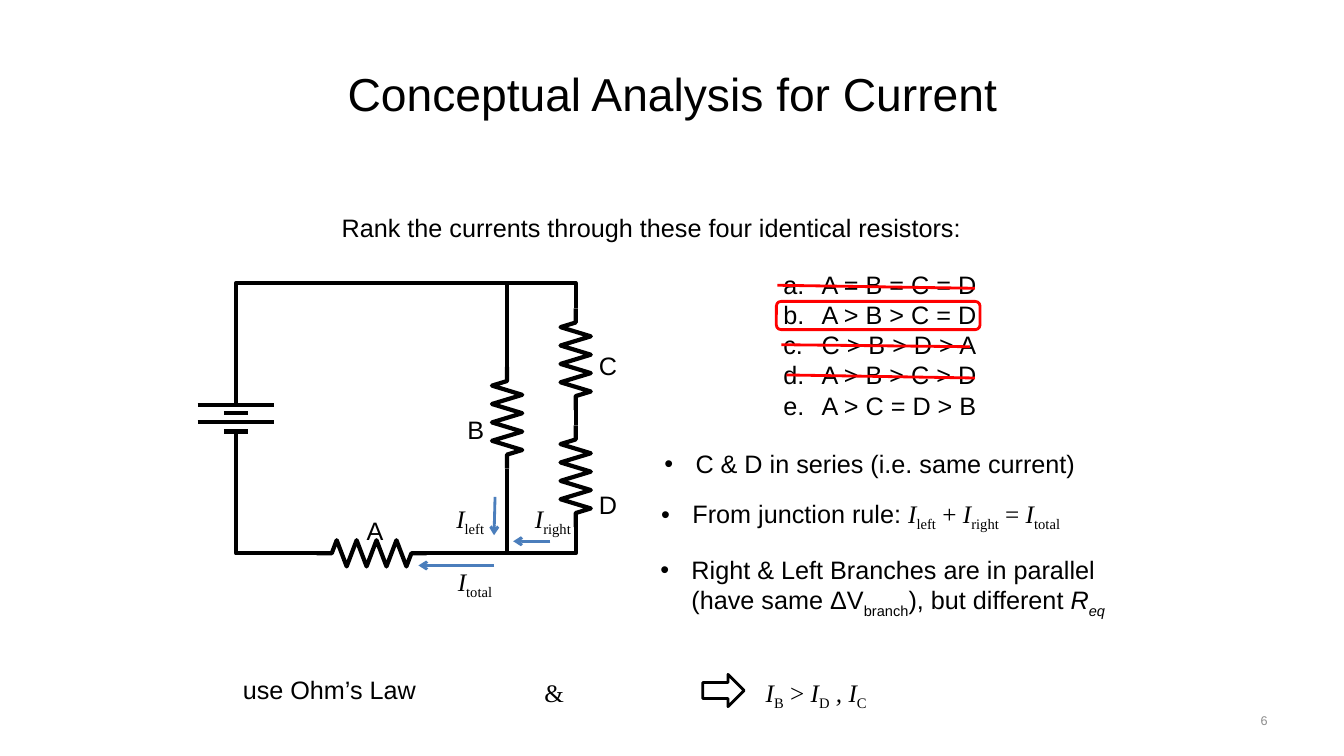
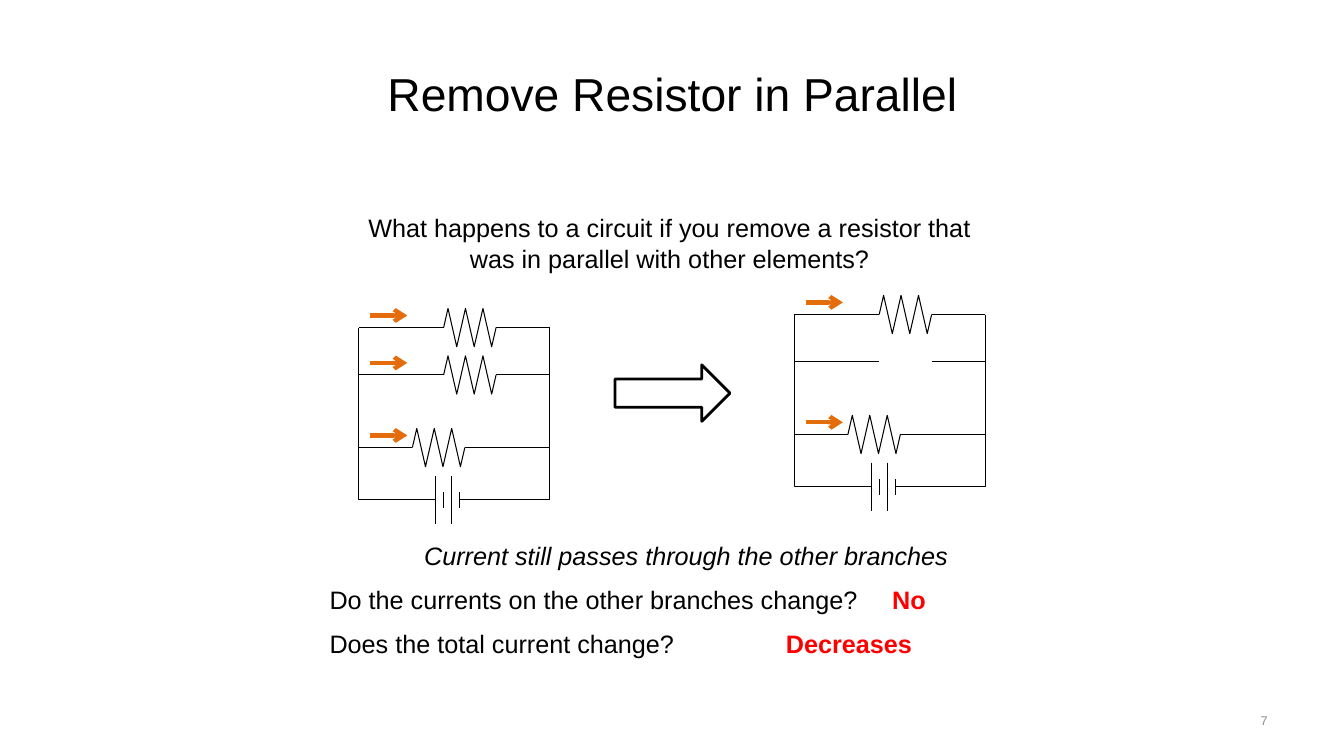
from lxml import etree
from pptx import Presentation
from pptx.dml.color import RGBColor
from pptx.enum.shapes import MSO_CONNECTOR, MSO_SHAPE
from pptx.enum.text import MSO_ANCHOR, PP_ALIGN
from pptx.oxml.ns import qn
from pptx.util import Inches, Pt

STRAIGHT = MSO_CONNECTOR.STRAIGHT
ROUNDED, RIGHT_ARROW = MSO_SHAPE.ROUNDED_RECTANGLE, MSO_SHAPE.RIGHT_ARROW
LEFT, CENTER, RIGHT = PP_ALIGN.LEFT, PP_ALIGN.CENTER, PP_ALIGN.RIGHT
MIDDLE = MSO_ANCHOR.MIDDLE

COLORS = {"ink": "000000", "answer": "FF0000", "current": "4B7EBC",
          "branch": "E46C0A", "page": "8C8C8C"}
SANS, SERIF = "Arial", "Times New Roman"
TITLE_SIZE, BODY_SIZE, PAGE_SIZE = 33, 18, 9
LINE_HEIGHT = 0.4


def color(name):
    return RGBColor.from_string(COLORS[name])


def format_run(run, style="", size=BODY_SIZE, ink="ink"):
    """Style letters: i italic, b bold, t serif, _ subscript."""
    font = run.font
    font.name = SERIF if "t" in style else SANS
    font.size = Pt(size)
    font.italic = "i" in style
    font.bold = "b" in style
    font.color.rgb = color(ink)
    if "_" in style:
        run._r.get_or_add_rPr().set("baseline", "-25000")


def add_text(slide, box, parts, align=LEFT, size=BODY_SIZE, ink="ink"):
    """Add a text box holding one paragraph of (text, style) parts."""
    frame = slide.shapes.add_textbox(*map(Inches, box)).text_frame
    frame.word_wrap = True
    paragraph = frame.paragraphs[0]
    paragraph.alignment = align
    for text, style in parts:
        run = paragraph.add_run()
        run.text = text
        format_run(run, style, size, ink)
    return frame


def add_bullet(paragraph, indent, tag, **attributes):
    properties = paragraph._p.get_or_add_pPr()
    properties.set("marL", str(Inches(indent)))
    properties.set("indent", str(-Inches(indent)))
    font = etree.SubElement(properties, qn("a:buFont"))
    font.set("typeface", SANS)
    etree.SubElement(properties, qn(tag), attributes)


def add_line(slide, start, end, ink="ink", width=3, arrow=False):
    line = slide.shapes.add_connector(STRAIGHT, *map(Inches, (*start, *end)))
    line.line.color.rgb = color(ink)
    line.line.width = Pt(width)
    if arrow:
        head = etree.SubElement(line.line._get_or_add_ln(), qn("a:tailEnd"))
        head.set("type", "arrow")
    etree.SubElement(line._element.spPr, qn("a:effectLst"))


def outline(shape, ink="ink", width=2):
    shape.fill.background()
    shape.line.color.rgb = color(ink)
    shape.line.width = Pt(width)
    shape.shadow.inherit = False


def add_outlined(slide, kind, box, ink="ink"):
    outline(slide.shapes.add_shape(kind, *map(Inches, box)), ink)


def add_wire(slide, points, width=3):
    if len(points) == 2:
        add_line(slide, *points, width=width)
        return
    corners = [(Inches(x), Inches(y)) for x, y in points]
    builder = slide.shapes.build_freeform(*corners[0])
    builder.add_line_segments(corners[1:], close=False)
    outline(builder.convert_to_shape(), width=width)


def add_resistor(slide, start, length, swing, peaks, lead=0, vertical=False, width=3):
    """Draw a zigzag from start, to the right or downwards."""
    step = (length - 2 * lead) / peaks
    zigzag = [(lead + (i + 0.5) * step, swing if i % 2 else -swing)
              for i in range(peaks)]
    ends = [(0, 0), (lead, 0)] if lead else [(0, 0)]
    track = ends + zigzag + [(length - along, 0) for along, _ in reversed(ends)]
    x, y = start
    add_wire(slide, [(x + across, y + along) if vertical else (x + along, y + across)
                     for along, across in track], width)


def add_base_slide(prs, title, page):
    slide = prs.slides.add_slide(prs.slide_layouts[5])
    heading = slide.shapes.title
    heading.left, heading.top = Inches(0.67), Inches(0.3)
    heading.width, heading.height = Inches(12), Inches(1.25)
    frame = heading.text_frame
    frame.text = title
    frame.vertical_anchor = MIDDLE
    frame.paragraphs[0].alignment = CENTER
    format_run(frame.paragraphs[0].runs[0], size=TITLE_SIZE)
    number = add_text(slide, (9.56, 6.95, 3.11, LINE_HEIGHT), [(page, "")],
                      RIGHT, PAGE_SIZE, "page")
    number.vertical_anchor = MIDDLE
    return slide


def add_mixed_circuit(slide, left, top):
    """A in series with two branches: B, and C followed by D."""
    def at(x, y):
        return left + x, top + y

    battery, inner, outer, bottom = 0.38, 3.07, 3.75, 2.68
    wires = [
        [(battery, 1.21), (battery, 0), (outer, 0), (outer, 0.25)],
        [(battery, 1.47), (battery, bottom), (1.18, bottom)],
        [(outer, 1.26), (outer, 1.41)],
        [(outer, 2.42), (outer, bottom), (2.27, bottom)],
        [(inner, 0), (inner, 0.83)],
        [(inner, 1.84), (inner, bottom)],
    ]
    for i, y in enumerate((1.21, 1.29, 1.38, 1.47)):
        half = 0.12 if i % 2 else 0.38
        wires.append([(battery - half, y), (battery + half, y)])
    for wire in wires:
        add_wire(slide, [at(*point) for point in wire])

    add_resistor(slide, at(1.18, bottom), 1.09, 0.13, 8, 0.15)
    for x, y in ((inner, 0.83), (outer, 0.25), (outer, 1.41)):
        add_resistor(slide, at(x, y), 1.01, 0.15, 8, 0.14, vertical=True)
    for name, x, y in (("A", 1.57, 2.25), ("B", 2.57, 1.25),
                       ("C", 3.88, 0.62), ("D", 3.88, 2)):
        add_text(slide, (*at(x, y), 0.38, LINE_HEIGHT), [(name, "")], CENTER)

    currents = [
        ("left", (2.35, 2.13), 0.59, (2.95, 2.12), (2.94, 2.5)),
        ("right", (3.11, 2.13), 0.69, (3.5, 2.56), (3.13, 2.56)),
        ("total", (2.32, 2.76), 0.7, (2.94, 2.8), (2.19, 2.8)),
    ]
    for name, corner, width, start, end in currents:
        add_line(slide, at(*start), at(*end), "current", 2, arrow=True)
        add_text(slide, (*at(*corner), width, LINE_HEIGHT),
                 [("I", "it"), (name, "t_")], RIGHT)


def add_choices(slide, left, top):
    choices = ["A = B = C = D", "A > B > C = D", "C > B > D > A",
               "A > B > C > D", "A > C = D > B"]
    frame = slide.shapes.add_textbox(*map(Inches, (left, top, 2.38, 1.62))).text_frame
    frame.word_wrap = True
    frame.text = "\n".join(choices)
    for paragraph in frame.paragraphs:
        format_run(paragraph.runs[0])
        add_bullet(paragraph, 0.38, "a:buAutoNum", type="alphaLcPeriod")
    add_outlined(slide, ROUNDED, (left + 0.03, top + 0.37, 2.02, 0.28), "answer")
    for x, y, width, drop in ((0.04, 0.21, 1.96, 0.03), (0.08, 0.8, 1.87, 0.02),
                              (0.13, 1.1, 1.87, 0.03)):
        start = left + x, top + y
        add_line(slide, start, (start[0] + width, start[1] + drop), "answer", 2)


def add_reasons(slide, left, top):
    reasons = [
        (0.03, 0, [("C & D in series (i.e. same current)", "")]),
        (0, 0.49, [("From junction rule: ", ""), ("I", "it"), ("left", "t_"),
                   (" + ", "t"), ("I", "it"), ("right", "t_"), (" =", "t"),
                   (" I", "it"), ("total", "t_")]),
        (-0.01, 1.05, [("Right & Left Branches are in parallel (have same ΔV", ""),
                       ("branch", "_"), ("), but different ", ""),
                       ("R", "i"), ("eq", "i_")]),
    ]
    for x, y, parts in reasons:
        frame = add_text(slide, (left + x, top + y, 4.88, LINE_HEIGHT), parts)
        add_bullet(frame.paragraphs[0], 0.31, "a:buChar", char="•")


def add_conclusion(slide, left, top):
    add_text(slide, (left, top, 1.94, LINE_HEIGHT), [("use Ohm’s Law", "")])
    add_text(slide, (left + 2.99, top + 0.03, 0.3, LINE_HEIGHT), [("&", "t")], CENTER)
    add_outlined(slide, RIGHT_ARROW, (left + 4.66, top + 0.05, 0.41, 0.32))
    add_text(slide, (left + 5.09, top + 0.03, 1.39, LINE_HEIGHT),
             [("I", "it"), ("B", "t_"), (" > ", "t"), ("I", "it"), ("D", "t_"),
              (" , I", "it"), ("C", "t_")], CENTER)


def add_parallel_circuit(slide, left, top, has_middle):
    """Three branches above a battery; the middle one may lack its resistor."""
    def at(x, y):
        return left + x, top + y

    width, bottom, span, thin = 1.89, 1.71, 0.52, 0.75
    plates = (0.76, 0.84, 0.92, 1)
    add_wire(slide, [at(plates[0], bottom), at(0, bottom), at(0, 0),
                     at(width, 0), at(width, bottom), at(plates[-1], bottom)][:3], thin)
    add_wire(slide, [at(width, 0), at(width, bottom), at(plates[-1], bottom)], thin)
    for i, x in enumerate(plates):
        half = 0.08 if i % 2 else 0.24
        add_wire(slide, [at(x, bottom - half), at(x, bottom + half)], thin)

    for y, x, has_resistor in ((0, 0.84, True), (0.47, 0.84, has_middle),
                               (1.19, 0.53, True)):
        add_wire(slide, [at(0, y), at(x, y)], thin)
        add_wire(slide, [at(x + span, y), at(width, y)], thin)
        if has_resistor:
            add_resistor(slide, at(x, y), span, 0.19, 6, width=thin)
            add_line(slide, at(0.11, y - 0.12), at(0.48, y - 0.12), "branch", arrow=True)


def add_questions(slide, left, top):
    add_text(slide, (left + 0.84, top, 5.59, LINE_HEIGHT),
             [("Current still passes through the other branches", "i")], CENTER)
    for y, question, answer, x, width in (
            (0.44, "Do the currents on the other branches change?", "No", 5.25, 1.19),
            (0.87, "Does the total current change?", "Decreases", 4.25, 2)):
        add_text(slide, (left, top + y, 5.44, LINE_HEIGHT), [(question, "")])
        add_text(slide, (left + x, top + y, width, LINE_HEIGHT), [(answer, "b")],
                 CENTER, ink="answer")


def build_current_slide(prs):
    slide = add_base_slide(prs, "Conceptual Analysis for Current", "6")
    add_text(slide, (3.29, 2.06, 6.75, LINE_HEIGHT),
             [("Rank the currents through these four identical resistors:", "")])
    add_mixed_circuit(slide, 1.96, 2.81)
    add_choices(slide, 7.67, 2.62)
    add_reasons(slide, 6.46, 4.4)
    add_conclusion(slide, 2.31, 6.64)


def build_parallel_slide(prs):
    slide = add_base_slide(prs, "Remove Resistor in Parallel", "7")
    add_text(slide, (3.42, 2.06, 6.44, 0.71),
             [("What happens to a circuit if you remove a resistor that "
               "was in parallel with other elements?", "")], CENTER)
    add_parallel_circuit(slide, 3.56, 3.25, has_middle=True)
    add_outlined(slide, RIGHT_ARROW, (6.1, 3.62, 1.14, 0.56))
    add_parallel_circuit(slide, 7.88, 3.12, has_middle=False)
    add_questions(slide, 3.17, 5.31)


def main():
    prs = Presentation()
    prs.slide_width, prs.slide_height = Inches(13.33), Inches(7.5)
    build_current_slide(prs)
    build_parallel_slide(prs)
    prs.save("out.pptx")


if __name__ == "__main__":
    main()
